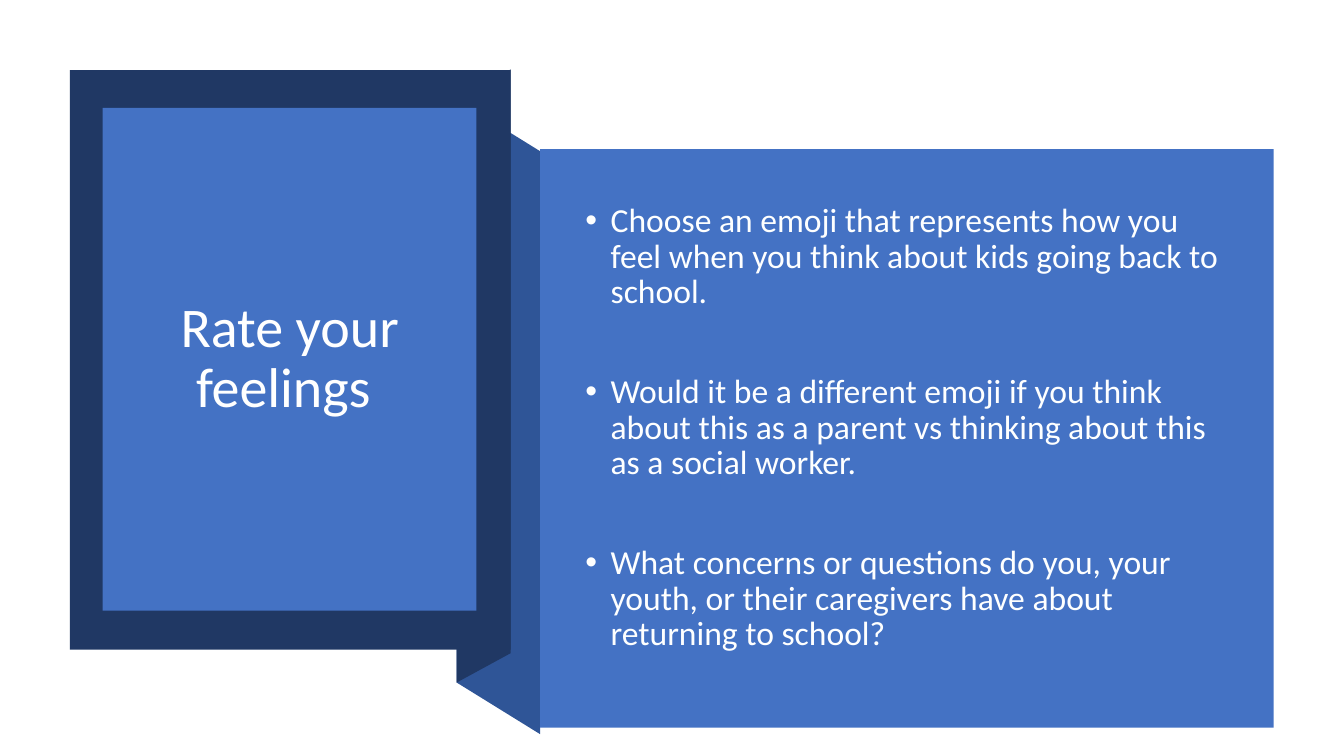
import pptx
import pptx.dml.color
import pptx.enum.shapes
import pptx.enum.text
import pptx.oxml
import pptx.util
from pptx.util import Cm, Pt

RGBColor = pptx.dml.color.RGBColor
NAVY = RGBColor(0x20, 0x38, 0x64)
MID_BLUE = RGBColor(0x2F, 0x55, 0x97)
BLUE = RGBColor(0x44, 0x72, 0xC4)
WHITE = RGBColor(0xFF, 0xFF, 0xFF)
OFF_WHITE = RGBColor(0xFE, 0xFF, 0xFF)

TITLE_FONT = {"name": "Calibri", "size": Pt(40)}
BULLET_FONT = {"name": "Calibri", "size": Pt(24)}
TITLE_FORMAT = {"alignment": pptx.enum.text.PP_ALIGN.CENTER, "line_spacing": 0.9}
BULLET_FORMAT = {"alignment": pptx.enum.text.PP_ALIGN.LEFT, "line_spacing": 0.88}
FRAME_FORMAT = {
    "word_wrap": True,
    "vertical_anchor": pptx.enum.text.MSO_ANCHOR.MIDDLE,
}

QUESTIONS = [
    "Choose an emoji that represents how you feel when you think about kids "
    "going back to school.",
    "Would it be a different emoji if you think about this as a parent vs "
    "thinking about this as a social worker.",
    "What concerns or questions do you, your youth, or their caregivers have "
    "about returning to school?",
]


def apply_format(target, values):
    for name, value in values.items():
        setattr(target, name, value)


def paint(shape, color):
    """Give the shape a plain fill without outline or shadow."""
    shape.shadow.inherit = False
    shape.fill.solid()
    shape.fill.fore_color.rgb = color
    shape.line.fill.background()


def add_fold(slide, points, color):
    """Draw a closed ribbon face through points given in centimetres."""
    corners = [(Cm(x), Cm(y)) for x, y in points]
    builder = slide.shapes.build_freeform(*corners[0], scale=1.0)
    builder.add_line_segments(corners[1:], close=True)
    paint(builder.convert_to_shape(), color)


def add_panel(slide, box, color):
    rectangle = pptx.enum.shapes.MSO_SHAPE.RECTANGLE
    shape = slide.shapes.add_shape(rectangle, *map(Cm, box))
    paint(shape, color)
    return shape


def write_paragraph(paragraph, text, paragraph_format, font, color):
    apply_format(paragraph, paragraph_format)
    run = paragraph.add_run()
    run.text = text
    apply_format(run.font, font)
    run.font.color.rgb = color


def add_bullet(paragraph):
    properties = paragraph._p.get_or_add_pPr()
    properties.set("marL", str(Cm(0.64)))
    properties.set("indent", str(Cm(-0.64)))
    namespace = pptx.oxml.ns.nsdecls("a")
    for xml in (f'<a:buFont {namespace} typeface="Arial"/>',
                f'<a:buChar {namespace} char="•"/>'):
        properties.append(pptx.oxml.parse_xml(xml))


def add_title(slide, text, box):
    frame = add_panel(slide, box, BLUE).text_frame
    apply_format(frame, FRAME_FORMAT)
    write_paragraph(frame.paragraphs[0], text, TITLE_FORMAT, TITLE_FONT, WHITE)


def add_questions(slide, questions, box):
    frame = slide.shapes.add_textbox(*map(Cm, box)).text_frame
    apply_format(frame, FRAME_FORMAT)
    for index, question in enumerate(questions):
        paragraph = frame.add_paragraph() if index else frame.paragraphs[0]
        write_paragraph(paragraph, question, BULLET_FORMAT, BULLET_FONT, OFF_WHITE)
        paragraph.space_before = Pt(46 if index else 0)
        add_bullet(paragraph)


def main():
    presentation = pptx.Presentation()
    presentation.slide_width = Cm(33.87)
    presentation.slide_height = Cm(19.05)
    slide = presentation.slides.add_slide(presentation.slide_layouts[6])

    add_fold(slide, [(13.61, 18.5), (11.51, 17.2), (11.51, 2.51), (13.61, 3.81)],
             MID_BLUE)
    add_fold(slide, [(12.87, 16.46), (11.51, 17.2), (11.51, 2.49), (12.87, 1.75)],
             NAVY)
    add_panel(slide, (1.76, 1.77, 11.11, 14.6), NAVY)
    add_title(slide, "Rate your feelings ", (2.59, 2.72, 9.42, 12.67))
    add_panel(slide, (13.61, 3.76, 18.49, 14.58), BLUE)
    add_questions(slide, QUESTIONS, (14.5, 4.78, 16.54, 12.04))

    presentation.save("out.pptx")


if __name__ == "__main__":
    main()
